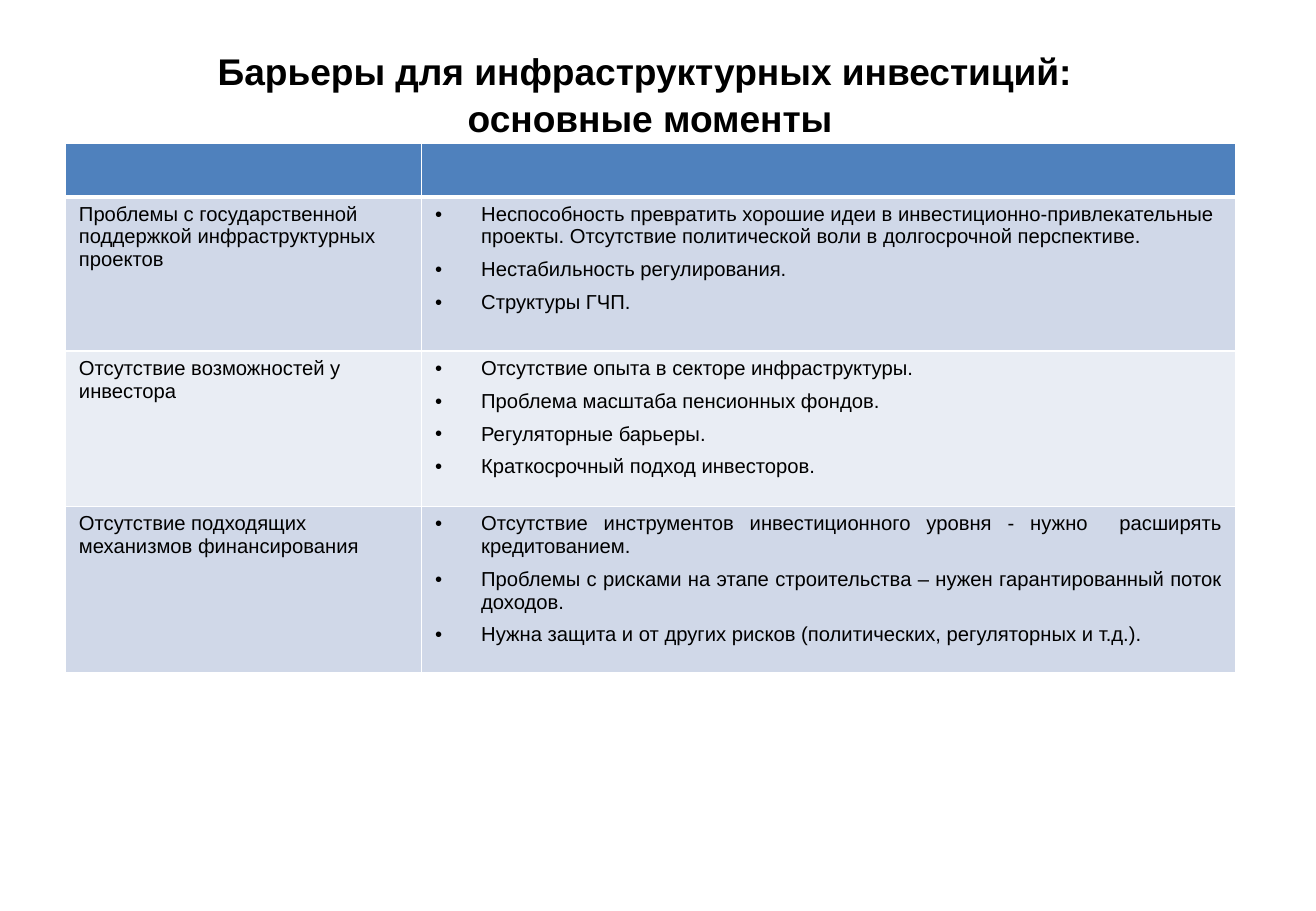
from lxml import etree
from pptx import Presentation
from pptx import util as u
from pptx.dml.color import RGBColor
from pptx.enum import text
from pptx.oxml.ns import qn

FONT = "Arial"
COLORS = {"text": "000000", "header": "4F81BD", "odd": "D0D8E8",
          "even": "E9EDF4", "border": "FFFFFF"}
COLUMN_WIDTHS = [2.93, 6.7]
ROW_HEIGHTS = [0.44, 1.27, 1.28, 1.37]
LEFT, JUSTIFY = text.PP_ALIGN.LEFT, text.PP_ALIGN.JUSTIFY

# Barrier, alignment of its points, points
BARRIERS = [
    ("Проблемы с государственной поддержкой инфраструктурных проектов", LEFT, [
        "Неспособность превратить хорошие идеи в инвестиционно-привлекательные "
        "проекты. Отсутствие политической воли в долгосрочной перспективе.",
        "Нестабильность регулирования.",
        "Структуры ГЧП."]),
    ("Отсутствие возможностей у инвестора", JUSTIFY, [
        "Отсутствие опыта в секторе инфраструктуры.",
        "Проблема масштаба пенсионных фондов.",
        "Регуляторные барьеры.",
        "Краткосрочный подход инвесторов."]),
    ("Отсутствие подходящих механизмов финансирования", JUSTIFY, [
        "Отсутствие инструментов инвестиционного уровня - нужно  расширять кредитованием.",
        "Проблемы с рисками на этапе строительства – нужен гарантированный поток доходов.",
        "Нужна защита и от других рисков (политических, регуляторных и т.д.)."]),
]


def format_runs(paragraph, size, bold=False):
    for run in paragraph.runs:
        run.font.name = FONT
        run.font.size = u.Pt(size)
        run.font.bold = bold
        run.font.color.rgb = RGBColor.from_string(COLORS["text"])


def add_bullet(paragraph):
    props = paragraph._p.get_or_add_pPr()
    props.set("marL", str(u.Inches(0.38)))
    props.set("indent", str(-u.Inches(0.38)))
    etree.SubElement(props, qn("a:buFont")).set("typeface", FONT)
    etree.SubElement(props, qn("a:buChar")).set("char", "•")


def style_cell(cell, fill, top=1, bottom=1):
    """Set white borders (widths in points), fill and margins."""
    props = cell._tc.get_or_add_tcPr()
    for side, width in (("L", 1), ("R", 1), ("T", top), ("B", bottom)):
        line = etree.SubElement(props, qn(f"a:ln{side}"), w=str(u.Pt(width)))
        solid = etree.SubElement(line, qn("a:solidFill"))
        etree.SubElement(solid, qn("a:srgbClr")).set("val", COLORS["border"])
    cell.fill.solid()
    cell.fill.fore_color.rgb = RGBColor.from_string(COLORS[fill])
    cell.margin_left = cell.margin_right = u.Inches(0.11)
    cell.margin_top = cell.margin_bottom = u.Inches(0.05)


def place_title(slide, left, top, width, height):
    title = slide.shapes.title
    title.left, title.top = u.Inches(left), u.Inches(top)
    title.width, title.height = u.Inches(width), u.Inches(height)
    frame = title.text_frame
    frame.text = "Барьеры для инфраструктурных инвестиций: \vосновные моменты"
    frame.margin_left = frame.margin_right = 0
    frame.margin_top = frame.margin_bottom = 0
    frame.word_wrap = True
    frame.auto_size = text.MSO_AUTO_SIZE.NONE
    frame.vertical_anchor = text.MSO_ANCHOR.TOP
    heading = frame.paragraphs[0]
    heading.alignment = text.PP_ALIGN.CENTER
    heading.line_spacing = 1.05
    format_runs(heading, 22, bold=True)


def fill_points(cell, points, alignment):
    cell.text_frame.text = "\n".join(points)
    for i, point in enumerate(cell.text_frame.paragraphs):
        add_bullet(point)
        point.alignment = alignment
        if i:
            point.space_before = u.Pt(6)
        format_runs(point, 12)


def add_barrier_table(slide, left, top):
    table = slide.shapes.add_table(
        len(ROW_HEIGHTS), len(COLUMN_WIDTHS), u.Inches(left), u.Inches(top),
        u.Inches(sum(COLUMN_WIDTHS)), u.Inches(sum(ROW_HEIGHTS))).table
    for column, width in zip(table.columns, COLUMN_WIDTHS):
        column.width = u.Inches(width)
    for row, height in zip(table.rows, ROW_HEIGHTS):
        row.height = u.Inches(height)

    # Empty header band
    for cell in table.rows[0].cells:
        style_cell(cell, "header", bottom=3)

    # One row per barrier
    for i, (barrier, alignment, points) in enumerate(BARRIERS, start=1):
        name_cell, points_cell = table.rows[i].cells
        for cell in (name_cell, points_cell):
            style_cell(cell, "odd" if i % 2 else "even", top=3 if i == 1 else 1)
        name_cell.text_frame.text = barrier
        format_runs(name_cell.text_frame.paragraphs[0], 12)
        fill_points(points_cell, points, alignment)


def main():
    deck = Presentation()
    deck.slide_width, deck.slide_height = u.Inches(10.83), u.Inches(7.5)
    slide = deck.slides.add_slide(deck.slide_layouts[5])
    place_title(slide, 0.25, 0.38, 10.2, 1)
    add_barrier_table(slide, 0.54, 1.18)
    deck.save("out.pptx")


if __name__ == "__main__":
    main()
